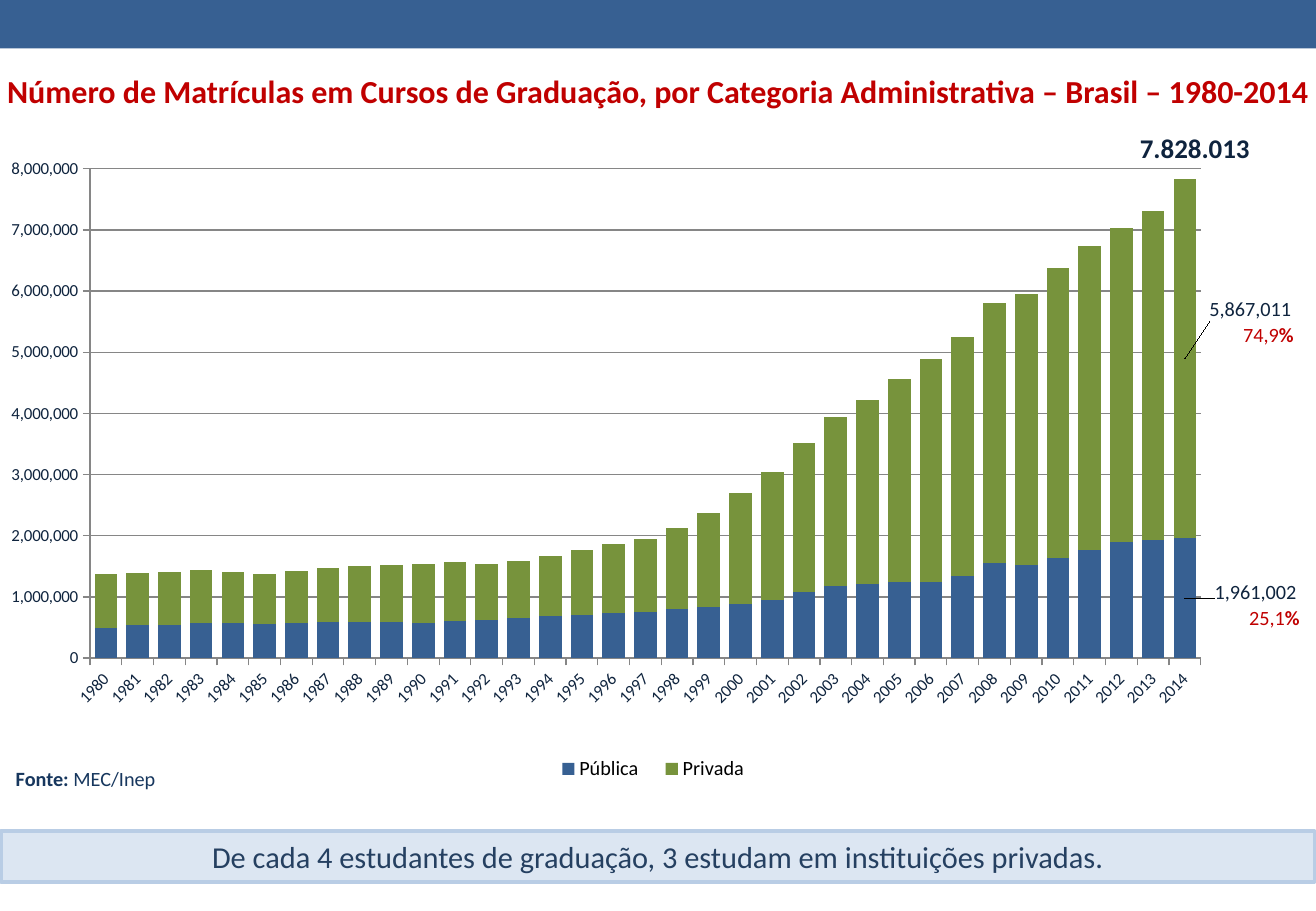
from dataclasses import dataclass

from lxml import etree
from pptx import Presentation
from pptx import util as u
from pptx.chart.data import CategoryChartData
from pptx.dml.color import RGBColor
from pptx.enum import chart as charts, shapes, text
from pptx.oxml import parse_xml
from pptx.oxml.ns import nsdecls, qn


@dataclass(frozen=True)
class Theme:
    font: str = "Calibri"
    public: str = "376092"
    private: str = "77933C"
    accent: str = "C00000"
    ink: str = "0F243E"
    source: str = "17375E"
    message: str = "254061"
    panel: str = "DCE6F2"
    panel_line: str = "B9CDE5"
    grid: str = "868686"
    black: str = "000000"
    title_size: int = 19
    message_size: int = 18
    total_size: int = 16
    label_size: int = 12
    axis_size: int = 10


THEME = Theme()
PLAIN_TABLE = "{2D5ABB26-0587-4C30-8999-92F81FD0307C}"
YEARS = [str(year) for year in range(1980, 2015)]
PUBLIC = [
    492232, 535810, 548388, 576689, 571879, 556680, 577632, 584965, 585351,
    584414, 578625, 605736, 629662, 653516, 690450, 700540, 735427, 759182,
    804729, 832022, 888708, 944584, 1085977, 1176174, 1214317, 1246704,
    1251365, 1335177, 1552953, 1523864, 1643298, 1773315, 1897376, 1932527,
    1961002]
PRIVATE = [
    885054, 850982, 859599, 862303, 827660, 810929, 840564, 885590, 918204,
    934490, 961455, 959320, 906126, 941152, 970584, 1059163, 1133102, 1186433,
    1321229, 1537923, 1807219, 2091529, 2434650, 2760759, 3009027, 3321094,
    3632487, 3914970, 4255064, 4430157, 4736001, 4966374, 5140312, 5373450,
    5867011]


def style_font(font, size, color, bold=False):
    font.name, font.size, font.bold = THEME.font, u.Pt(size), bold
    font.color.rgb = RGBColor.from_string(color)


def write(holder, spans, size, color, insets, align=text.PP_ALIGN.LEFT):
    """Fill a shape's frame or a cell with one paragraph of (wording, bold) spans."""
    (holder.margin_left, holder.margin_top,
     holder.margin_right, holder.margin_bottom) = map(u.Inches, insets)
    frame = getattr(holder, "text_frame", holder)
    para = frame.paragraphs[0]
    para.alignment = align
    for wording, bold in spans:
        span = para.add_run()
        span.text = wording
        style_font(span.font, size, color, bold)


def write_box(box, spans, size, color, align=text.PP_ALIGN.LEFT):
    box.text_frame.word_wrap = True
    write(box.text_frame, spans, size, color, (0.12, 0.06, 0.12, 0.06), align)


def add_title_table(page, wording, place):
    """Heading held in a table of one plain cell."""
    frame = page.shapes.add_table(1, 1, *map(u.Inches, place))
    table = frame.table
    table.first_row = table.horz_banding = False
    table._tbl.tblPr.find(qn("a:tableStyleId")).text = PLAIN_TABLE
    cell = table.cell(0, 0)
    cell.fill.background()
    cell.vertical_anchor = text.MSO_ANCHOR.MIDDLE
    write(cell, [(wording, True)], THEME.title_size, THEME.accent,
          (0.01, 0.01, 0.01, 0), text.PP_ALIGN.CENTER)


def add_panel(page, place, fill, line=None):
    panel = page.shapes.add_shape(shapes.MSO_SHAPE.RECTANGLE, *map(u.Inches, place))
    panel.shadow.inherit = False
    panel.fill.solid()
    panel.fill.fore_color.rgb = RGBColor.from_string(fill)
    if line:
        panel.line.color.rgb = RGBColor.from_string(line)
        panel.line.width = u.Pt(2)
    else:
        panel.line.fill.background()
    return panel


def add_note(page, place, spans, size, color):
    write_box(page.shapes.add_textbox(*map(u.Inches, place)), spans, size, color)


def manual_layout(**values):
    items = "".join(f'<c:{key} val="{value}"/>' for key, value in values.items())
    return parse_xml(f'<c:layout {nsdecls("c")}><c:manualLayout>{items}'
                     '</c:manualLayout></c:layout>')


def style_axis(axis):
    style_font(axis.tick_labels.font, THEME.axis_size, THEME.ink)
    axis.major_tick_mark = charts.XL_TICK_MARK.OUTSIDE
    axis.format.line.color.rgb = RGBColor.from_string(THEME.grid)


def label_last_point(series, shift_x, shift_y):
    """Label the last bar to its side, joined by a leader line."""
    label = series.points[len(YEARS) - 1].data_label
    style_font(label.font, THEME.label_size, THEME.ink)
    series.data_labels.show_value = False
    labels = series.data_labels._element
    labels.find(qn("c:dLbl")).insert(1, manual_layout(x=shift_x, y=shift_y))
    labels.append(etree.fromstring(
        f'<c:extLst {nsdecls("c")}>'
        '<c:ext uri="{CE6537A1-D6FC-4f65-9D91-7224C49458BB}" '
        'xmlns:c15="http://schemas.microsoft.com/office/drawing/2012/chart">'
        '<c15:showLeaderLines val="1"/></c:ext></c:extLst>'))


def add_enrolment_chart(page, place):
    data = CategoryChartData(number_format="#,##0")
    data.categories = YEARS
    data.add_series("Pública", PUBLIC)
    data.add_series("Privada", PRIVATE)
    chart = page.shapes.add_chart(charts.XL_CHART_TYPE.COLUMN_STACKED,
                                  *map(u.Inches, place), data).chart
    style_font(chart.font, THEME.axis_size, THEME.black)
    chart.has_title = False

    # Plot area
    area = chart._chartSpace.chart.plotArea
    for old in area.findall(qn("c:layout")):
        area.remove(old)
    area.insert(0, manual_layout(layoutTarget="inner", xMode="edge", yMode="edge",
                                 x=0.065, y=0.03, w=0.848, h=0.756))

    # Axes
    style_axis(chart.category_axis)
    body = chart.category_axis._element.find(qn("c:txPr")).find(qn("a:bodyPr"))
    body.set("rot", "-2700000")
    values = chart.value_axis
    style_axis(values)
    values.minimum_scale, values.maximum_scale = 0, 8000000
    values.major_unit = 1000000
    values.tick_labels.number_format = "#,##0"
    values.tick_labels.number_format_is_linked = False
    values.major_gridlines.format.line.color.rgb = RGBColor.from_string(THEME.grid)

    # Legend
    chart.has_legend = True
    legend = chart.legend
    legend.position = charts.XL_LEGEND_POSITION.BOTTOM
    legend.include_in_layout = False
    style_font(legend.font, THEME.label_size, THEME.black)
    for old in legend._element.findall(qn("c:layout")):
        legend._element.remove(old)
    legend._element.find(qn("c:legendPos")).addnext(manual_layout(
        xMode="edge", yMode="edge", x=0.41, y=0.927, w=0.17, h=0.06))

    # Series
    plot = chart.plots[0]
    plot.gap_width, plot.overlap, plot.vary_by_categories = 40, 100, False
    looks = [(THEME.public, 0.054, -0.008), (THEME.private, 0.05, -0.076)]
    for series, (color, shift_x, shift_y) in zip(plot.series, looks):
        series.format.fill.solid()
        series.format.fill.fore_color.rgb = RGBColor.from_string(color)
        label_last_point(series, shift_x, shift_y)


def main():
    deck = Presentation()
    deck.slide_width, deck.slide_height = u.Inches(10.83), u.Inches(7.5)
    page = deck.slides.add_slide(deck.slide_layouts[6])

    # Heading
    add_panel(page, (0, 0, 10.83, 0.4), THEME.public)
    add_title_table(page, "Número de Matrículas em Cursos de Graduação, por Categoria "
                    "Administrativa – Brasil – 1980-2014", (0, 0.5, 10.83, 0.52))

    # Chart and its notes
    add_enrolment_chart(page, (0.04, 1.23, 10.78, 5.33))
    add_note(page, (9.26, 1.02, 1.19, 0.39), [("7.828.013", True)],
             THEME.total_size, THEME.ink)
    for left, top, share in ((10.11, 2.59, "74,9"), (10.16, 4.92, "25,1")):
        add_note(page, (left, top, 0.77, 0.32), [(share, False), ("%", True)],
                 THEME.label_size, THEME.accent)
    add_note(page, (0.01, 6.25, 1.4, 0.32), [("Fonte: ", True), ("MEC/Inep", False)],
             THEME.label_size, THEME.source)

    # Key message
    message = add_panel(page, (0.01, 6.84, 10.81, 0.42), THEME.panel, THEME.panel_line)
    write_box(message, [("De cada 4 estudantes de graduação, 3 estudam em "
                         "instituições privadas.", False)],
              THEME.message_size, THEME.message, text.PP_ALIGN.CENTER)

    deck.save("out.pptx")


if __name__ == "__main__":
    main()
